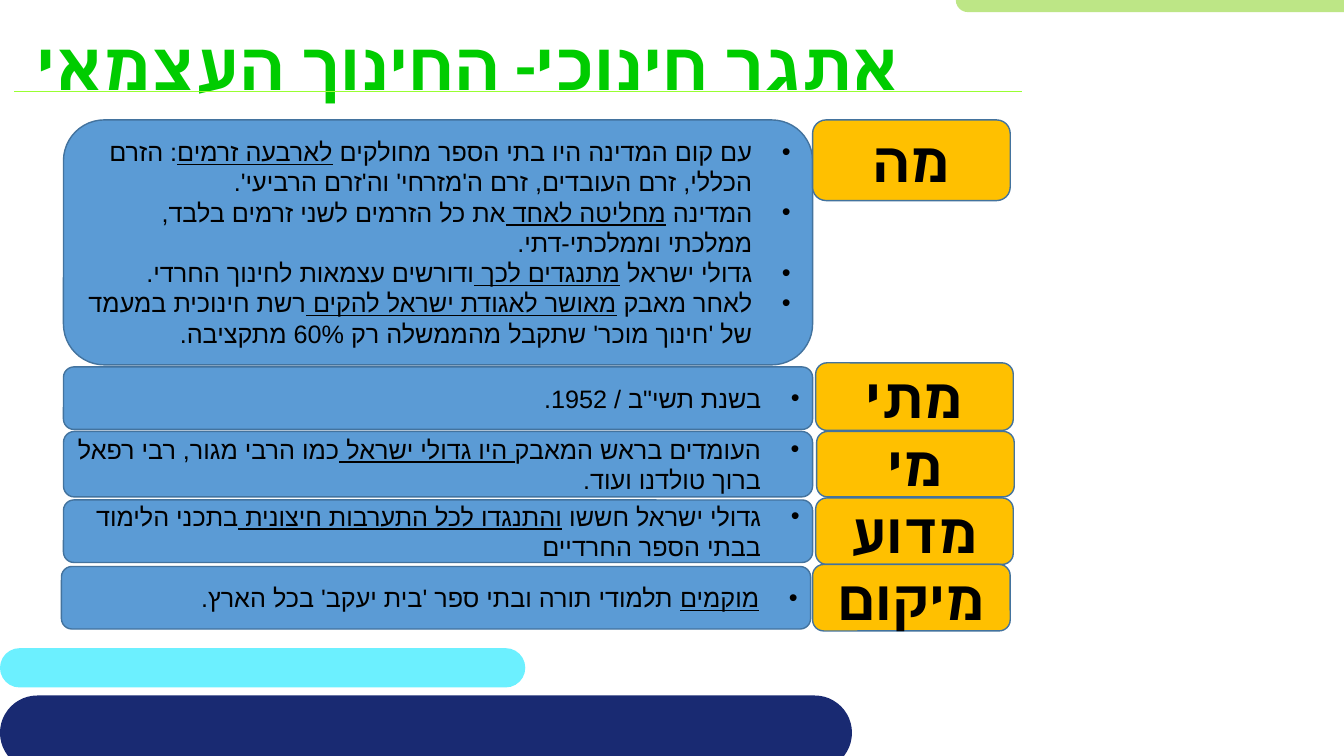
from lxml import etree
from pptx import Presentation
from pptx.dml.color import RGBColor
from pptx.enum.shapes import MSO_CONNECTOR as Connector, MSO_SHAPE as Shape
from pptx.enum.text import MSO_ANCHOR as Anchor, MSO_AUTO_SIZE as AutoSize, PP_ALIGN as Align
from pptx.oxml.ns import qn
from pptx.util import Inches, Pt

COLORS = {
    "title": "00CC00", "rule": "99FF33", "answer": "5B9BD5", "question": "FFC000",
    "outline": "43739E", "text": "000000",
    "cyan": "6CF0FF", "lime": "BDE686", "navy": "192A72",
}
FONT = "Calibri"
TITLE_STYLE = {"size": Pt(48), "bold": True}
QUESTION_STYLE = {"size": Pt(40), "bold": True}
ANSWER_STYLE = {"size": Pt(18), "bold": False}
HANGING = Inches(0.38)

# Left, top, width, height, colour
BARS = [
    (0, 6.43, 5.21, 0.39, "cyan"),
    (9.48, -0.12, 5.8, 0.24, "lime"),
    (0, 6.9, 8.45, 0.74, "navy"),
]

# Question, its box, answer box, answer paragraphs; "_" toggles underlining
ROWS = [
    ("מה", (8.06, 1.19, 1.96, 0.8), (0.63, 1.19, 7.43, 2.43), [
        "עם קום המדינה היו בתי הספר מחולקים _לארבעה זרמים_: הזרם הכללי, "
        "זרם העובדים, זרם ה'מזרחי' וה'זרם הרביעי'.",
        "המדינה _מחליטה לאחד _את כל הזרמים לשני זרמים בלבד, ממלכתי וממלכתי-דתי.",
        "גדולי ישראל _מתנגדים לכך _ודורשים עצמאות לחינוך החרדי.",
        "לאחר מאבק _מאושר לאגודת ישראל להקים _רשת חינוכית במעמד של "
        "'חינוך מוכר' שתקבל מהממשלה רק 60% מתקציבה.",
    ]),
    ("מתי", (8.09, 3.6, 1.96, 0.67), (0.63, 3.64, 7.43, 0.62),
     ["בשנת תשי\"ב / 1952."]),
    ("מי", (8.1, 4.28, 1.96, 0.65), (0.63, 4.28, 7.43, 0.65),
     ["העומדים בראש המאבק_ היו גדולי ישראל _כמו הרבי מגור, "
      "רבי רפאל ברוך טולדנו ועוד."]),
    ("מדוע", (8.09, 4.94, 1.96, 0.66), (0.63, 4.96, 7.43, 0.62),
     ["גדולי ישראל חששו _והתנגדו לכל התערבות חיצונית _בתכני הלימוד "
      "בבתי הספר החרדיים"]),
    ("מיקום", (8.06, 5.6, 1.96, 0.66), (0.61, 5.62, 7.43, 0.62),
     ["_מוקמים_ תלמודי תורה ובתי ספר 'בית יעקב' בכל הארץ."]),
]


def rgb(name):
    return RGBColor.from_string(COLORS[name])


def add_run(paragraph, text, style, color, underline=False, hebrew_font=None):
    run = paragraph.add_run()
    run.text = text
    formats = {**style, "name": FONT, "underline": underline}
    for name, value in formats.items():
        setattr(run.font, name, value)
    run.font.color.rgb = rgb(color)
    if hebrew_font:
        properties = run._r.get_or_add_rPr()
        etree.SubElement(properties, qn("a:cs"), typeface=hebrew_font)


def set_right_to_left(paragraph, align, bullet=False):
    properties = paragraph._p.get_or_add_pPr()
    properties.set("rtl", "1")
    if bullet:
        properties.set("marL", str(HANGING))
        properties.set("indent", str(-HANGING))
        etree.SubElement(properties, qn("a:buFont"), typeface="Arial")
        etree.SubElement(properties, qn("a:buChar"), char="•")
    paragraph.alignment = align


def add_rounded(slide, box, fill, outline=None):
    shape = slide.shapes.add_shape(Shape.ROUNDED_RECTANGLE, *map(Inches, box))
    shape.shadow.inherit = False
    shape.fill.solid()
    shape.fill.fore_color.rgb = rgb(fill)
    if outline:
        shape.line.color.rgb = rgb(outline)
        shape.line.width = Pt(1)
    else:
        shape.line.fill.background()
    shape.text_frame.word_wrap = True
    shape.text_frame.vertical_anchor = Anchor.MIDDLE
    return shape


def add_bars(slide):
    for *box, color in BARS:
        add_rounded(slide, box, color).adjustments[0] = 0.5


def add_title(slide, box, text):
    title = slide.shapes.title
    title.left, title.top, title.width, title.height = map(Inches, box)
    frame = title.text_frame
    frame.word_wrap = True
    frame.auto_size = AutoSize.NONE
    frame.vertical_anchor = Anchor.TOP
    set_right_to_left(frame.paragraphs[0], Align.LEFT)
    add_run(frame.paragraphs[0], text, TITLE_STYLE, "title", hebrew_font=FONT)


def add_rule(slide, left, top, width):
    rule = slide.shapes.add_connector(
        Connector.STRAIGHT, Inches(left), Inches(top), Inches(left + width), Inches(top))
    rule.line.color.rgb = rgb("rule")
    rule.line.width = Pt(0.5)
    etree.SubElement(rule._element.spPr, qn("a:effectLst"))


def add_answer(slide, box, texts):
    frame = add_rounded(slide, box, "answer", "outline").text_frame
    for index, text in enumerate(texts):
        paragraph = frame.add_paragraph() if index else frame.paragraphs[0]
        set_right_to_left(paragraph, Align.RIGHT, bullet=True)
        for part, piece in enumerate(text.split("_")):
            if piece:
                add_run(paragraph, piece, ANSWER_STYLE, "text",
                        underline=part % 2 == 1, hebrew_font="Arial")


def add_question(slide, box, text):
    paragraph = add_rounded(slide, box, "question", "outline").text_frame.paragraphs[0]
    set_right_to_left(paragraph, Align.CENTER)
    add_run(paragraph, text, QUESTION_STYLE, "text", hebrew_font=FONT)


def main():
    presentation = Presentation()
    presentation.slide_width = Inches(13.33)
    presentation.slide_height = Inches(7.5)
    slide = presentation.slides.add_slide(presentation.slide_layouts[5])

    # Background bars and heading
    add_bars(slide)
    add_title(slide, (0.26, 0.18, 9.4, 1.7), "אתגר חינוכי- החינוך העצמאי")
    add_rule(slide, 0.14, 0.91, 10)

    # Questions with their answers
    for question, question_box, answer_box, answers in ROWS:
        add_answer(slide, answer_box, answers)
        add_question(slide, question_box, question)

    presentation.save("out.pptx")


if __name__ == "__main__":
    main()
